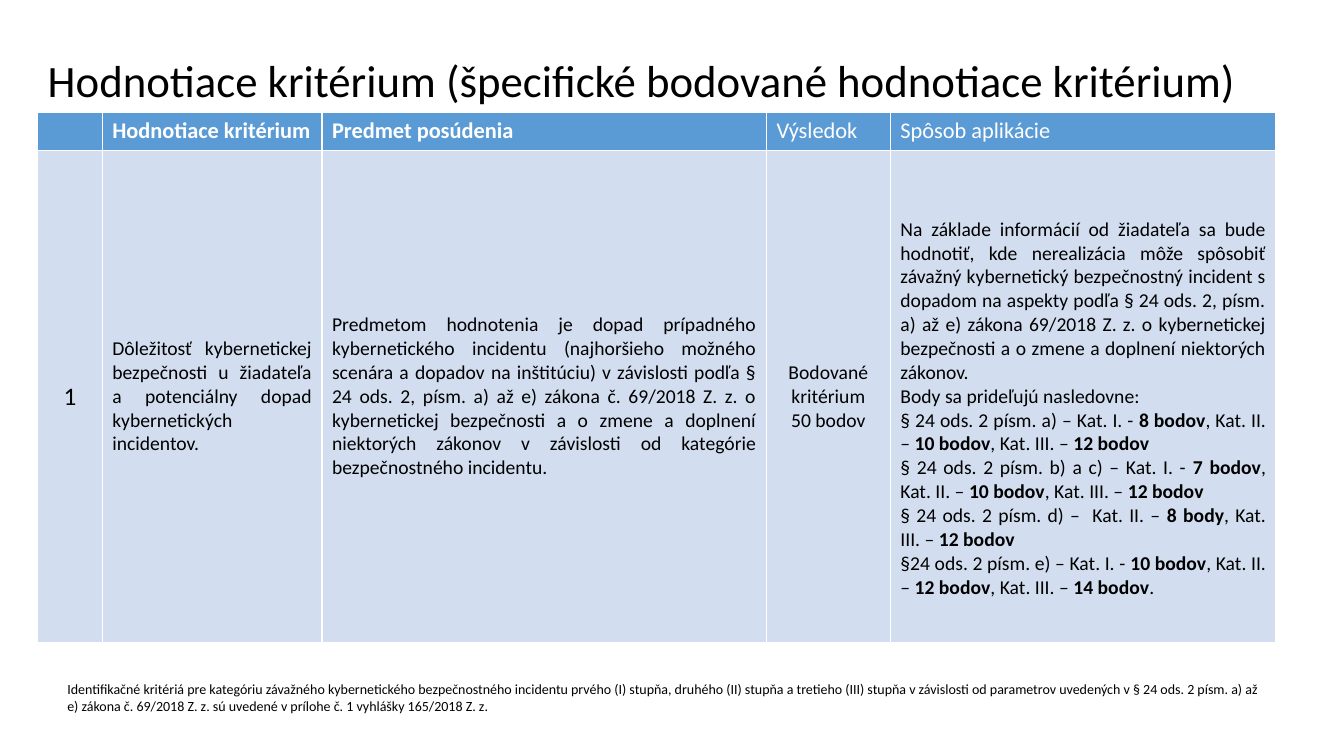
from dataclasses import dataclass

from lxml import etree
from pptx import Presentation
from pptx import util as u
from pptx.dml.color import RGBColor
from pptx.enum import text
from pptx.oxml import ns


@dataclass(frozen=True)
class Theme:
    font: str = "Calibri"
    ink: str = "000000"
    white: str = "FFFFFF"
    header_fill: str = "5B9BD5"
    body_fill: str = "D2DEEF"
    title_size: int = 32
    number_size: int = 18
    header_size: int = 16
    body_size: int = 14
    note_size: int = 10
    border: int = 1


THEME = Theme()
LEFT, CENTER, JUSTIFY = (text.PP_ALIGN.LEFT, text.PP_ALIGN.CENTER, text.PP_ALIGN.JUSTIFY)

TITLE = "Hodnotiace kritérium (špecifické bodované hodnotiace kritérium)"
NOTE = (
    "Identifikačné kritériá pre kategóriu závažného kybernetického bezpečnostného incidentu "
    "prvého (I) stupňa, druhého (II) stupňa a tretieho (III) stupňa v závislosti od parametrov "
    "uvedených v § 24 ods. 2 písm. a) až e) zákona č. 69/2018 Z. z. sú uvedené v prílohe č. 1 "
    "vyhlášky 165/2018 Z. z."
)

COLUMN_WIDTHS = [46, 157, 317.5, 88.5, 275.5]
ROW_HEIGHTS = [27.5, 351.5]

# Text between double asterisks is bold
HEADERS = ["", "**Hodnotiace kritérium**", "**Predmet posúdenia**", "Výsledok", "Spôsob aplikácie"]

CRITERION = [
    "Dôležitosť kybernetickej bezpečnosti u žiadateľa a potenciálny dopad kybernetických "
    "incidentov."
]
SUBJECT = [
    "Predmetom hodnotenia je dopad prípadného kybernetického incidentu (najhoršieho možného "
    "scenára a dopadov na inštitúciu) v závislosti podľa § 24 ods. 2, písm. a) až e) zákona "
    "č. 69/2018 Z. z. o kybernetickej bezpečnosti a o zmene a doplnení niektorých zákonov "
    "v závislosti od kategórie bezpečnostného incidentu."
]
RESULT = ["Bodované kritérium", "50 bodov"]
APPLICATION = [
    "Na základe informácií od žiadateľa sa bude hodnotiť, kde nerealizácia môže spôsobiť "
    "závažný kybernetický bezpečnostný incident s dopadom na aspekty podľa § 24 ods. 2, písm. "
    "a) až e) zákona 69/2018 Z. z. o kybernetickej bezpečnosti a o zmene a doplnení niektorých "
    "zákonov.",
    "Body sa prideľujú nasledovne:",
    "§ 24 ods. 2 písm. a) – Kat. I. - **8 bodov**, Kat. II. – **10 bodov**, Kat. III. – **12 bodov**",
    "§ 24 ods. 2 písm. b) a c) – Kat. I. - **7 bodov**, Kat. II. – **10 bodov**, Kat. III. – **12 bodov**",
    "§ 24 ods. 2 písm. d) –  Kat. II. – **8 body**, Kat. III. – **12 bodov**",
    "§24 ods. 2 písm. e) – Kat. I. - **10 bodov**, Kat. II. – **12 bodov**, Kat. III. – **14 bodov**.",
]
BODY = [
    (["1"], CENTER, THEME.number_size),
    (CRITERION, JUSTIFY, THEME.body_size),
    (SUBJECT, JUSTIFY, THEME.body_size),
    (RESULT, CENTER, THEME.body_size),
    (APPLICATION, JUSTIFY, THEME.body_size),
]


def write_paragraphs(frame, lines, size, color, align=LEFT):
    for index, line in enumerate(lines):
        paragraph = frame.paragraphs[0] if index == 0 else frame.add_paragraph()
        paragraph.alignment = align
        paragraph.font.size = u.Pt(size)
        for position, part in enumerate(line.split("**")):
            if not part:
                continue
            run = paragraph.add_run()
            run.text = part
            run.font.name = THEME.font
            run.font.size = u.Pt(size)
            run.font.bold = position % 2 == 1
            run.font.color.rgb = RGBColor.from_string(color)


def add_text(slide, box, line, size, anchor=text.MSO_ANCHOR.TOP):
    shape = slide.shapes.add_textbox(*(u.Pt(length) for length in box))
    frame = shape.text_frame
    frame.word_wrap = True
    frame.vertical_anchor = anchor
    write_paragraphs(frame, [line], size, THEME.ink)
    return frame


def style_cell(cell, fill):
    properties = cell._tc.get_or_add_tcPr()
    for side in ("a:lnL", "a:lnR", "a:lnT", "a:lnB"):
        line = etree.SubElement(properties, ns.qn(side), w=str(u.Pt(THEME.border)))
        solid = etree.SubElement(line, ns.qn("a:solidFill"))
        etree.SubElement(solid, ns.qn("a:srgbClr"), val=THEME.white)
    cell.fill.solid()
    cell.fill.fore_color.rgb = RGBColor.from_string(fill)


def add_title(slide, box):
    frame = add_text(slide, box, TITLE, THEME.title_size, text.MSO_ANCHOR.BOTTOM)
    frame.paragraphs[0].line_spacing = 0.9


def add_criteria_table(slide, left, top):
    table = slide.shapes.add_table(
        len(ROW_HEIGHTS), len(COLUMN_WIDTHS), u.Pt(left), u.Pt(top),
        u.Pt(sum(COLUMN_WIDTHS)), u.Pt(sum(ROW_HEIGHTS)),
    ).table
    for column, width in zip(table.columns, COLUMN_WIDTHS):
        column.width = u.Pt(width)
    for row, height in zip(table.rows, ROW_HEIGHTS):
        row.height = u.Pt(height)

    # Header row
    for index, header in enumerate(HEADERS):
        cell = table.cell(0, index)
        style_cell(cell, THEME.header_fill)
        write_paragraphs(cell.text_frame, [header], THEME.header_size, THEME.white)

    # Criterion row
    for index, (lines, align, size) in enumerate(BODY):
        cell = table.cell(1, index)
        style_cell(cell, THEME.body_fill)
        cell.vertical_anchor = text.MSO_ANCHOR.MIDDLE
        write_paragraphs(cell.text_frame, lines, size, THEME.ink, align)

    # The scoring text sits half a line below the middle
    table.cell(1, len(BODY) - 1).margin_top = u.Pt(20.6)


def main():
    presentation = Presentation()
    presentation.slide_width, presentation.slide_height = u.Pt(960), u.Pt(540)
    slide = presentation.slides.add_slide(presentation.slide_layouts[6])
    add_title(slide, (27, 21, 885, 59))
    add_criteria_table(slide, 27, 80)
    add_text(slide, (41, 482.5, 870.5, 31.5), NOTE, THEME.note_size)
    presentation.save("out.pptx")


if __name__ == "__main__":
    main()
